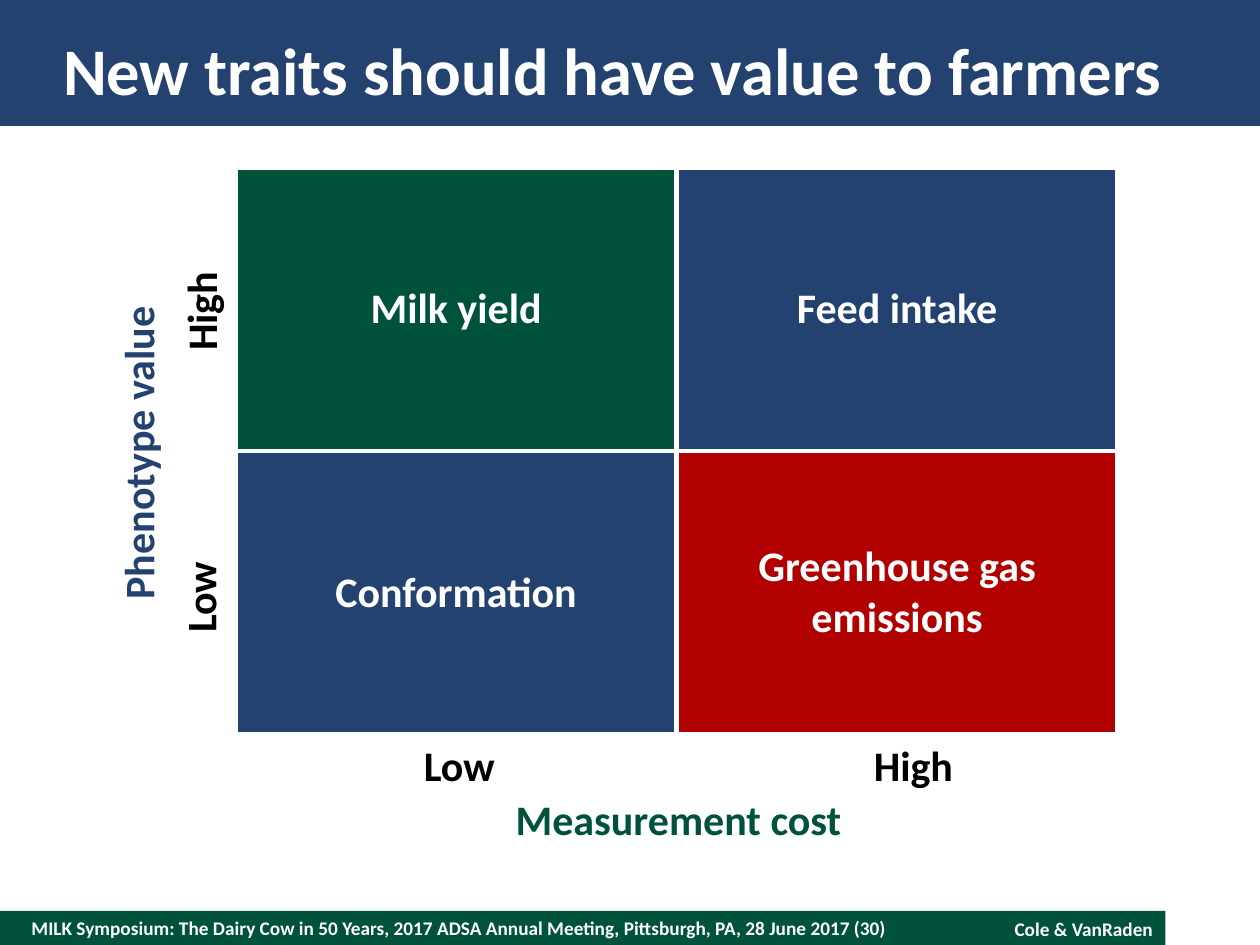
import pptx
import pptx.dml.color
import pptx.enum.shapes
import pptx.enum.text
import pptx.oxml.ns
import pptx.util
from lxml import etree

Inches = pptx.util.Inches
Pt = pptx.util.Pt
Align = pptx.enum.text.PP_ALIGN
Anchor = pptx.enum.text.MSO_ANCHOR

COLORS = {
    "green": "00523C",
    "blue": "244270",
    "red": "B00000",
    "white": "FFFFFF",
    "black": "000000",
}
CELLS = [
    [("Milk yield", "green"), ("Feed intake", "blue")],
    [("Conformation", "blue"), ("Greenhouse gas emissions", "red")],
]


def color(name):
    return pptx.dml.color.RGBColor.from_string(COLORS[name])


def write_text(frame, text, size=24, fill="white", align=Align.CENTER,
               line_spacing=None):
    paragraph = frame.paragraphs[0]
    paragraph.alignment = align
    if line_spacing:
        paragraph.line_spacing = Pt(line_spacing)
    run = paragraph.add_run()
    run.text = text
    run.font.name = "Calibri"
    run.font.size = Pt(size)
    run.font.bold = True
    run.font.color.rgb = color(fill)


def clear_margins(target):
    """Set the four text margins of a text frame or table cell to zero."""
    for side in ("left", "top", "right", "bottom"):
        setattr(target, f"margin_{side}", 0)


def add_bar(slide, left, top, width, height, fill):
    shape = slide.shapes.add_shape(
        pptx.enum.shapes.MSO_SHAPE.RECTANGLE,
        Inches(left), Inches(top), Inches(width), Inches(height))
    shape.shadow.inherit = False
    shape.fill.solid()
    shape.fill.fore_color.rgb = color(fill)
    shape.line.fill.background()


def add_label(slide, text, left, top, width, height, rotation=0, wrap=True,
              **text_format):
    shape = slide.shapes.add_textbox(
        Inches(left), Inches(top), Inches(width), Inches(height))
    shape.rotation = rotation
    shape.text_frame.word_wrap = wrap
    write_text(shape.text_frame, text, **text_format)
    return shape


def add_title(slide, text):
    title = slide.shapes.title
    title.left, title.top = Inches(0.5), Inches(0.2)
    title.width, title.height = Inches(9), Inches(0.7)
    frame = title.text_frame
    frame.auto_size = pptx.enum.text.MSO_AUTO_SIZE.NONE
    frame.vertical_anchor = Anchor.MIDDLE
    clear_margins(frame)
    write_text(frame, text, size=38, align=Align.LEFT)
    # The placeholder comes first in the layout, so lift it above the bar.
    slide.shapes._spTree.append(title._element)


def add_footer(slide):
    source = add_label(
        slide,
        "MILK Symposium: The Dairy Cow in 50 Years, 2017 ADSA Annual Meeting, "
        "Pittsburgh, PA, 28 June 2017 (30)",
        0.25, 7.23, 7, 0.27, size=11, align=Align.LEFT)
    source.text_frame.vertical_anchor = Anchor.MIDDLE
    clear_margins(source.text_frame)
    add_label(slide, "Cole & VanRaden", 7.25, 7.23, 2, 0.29,
              size=11, align=Align.RIGHT)


def set_borders(cell, fill, width):
    properties = cell._tc.get_or_add_tcPr()
    qn = pptx.oxml.ns.qn
    for index, side in enumerate(("lnL", "lnR", "lnT", "lnB")):
        line = etree.Element(qn(f"a:{side}"), w=str(Pt(width)))
        solid = etree.SubElement(line, qn("a:solidFill"))
        etree.SubElement(solid, qn("a:srgbClr"), val=COLORS[fill])
        properties.insert(index, line)


def add_matrix(slide):
    table = slide.shapes.add_table(
        2, 2, Inches(1.87), Inches(1.33), Inches(7), Inches(4.5)).table
    for row, values in enumerate(CELLS):
        for column, (text, fill) in enumerate(values):
            cell = table.cell(row, column)
            cell.fill.solid()
            cell.fill.fore_color.rgb = color(fill)
            cell.vertical_anchor = Anchor.MIDDLE
            clear_margins(cell)
            set_borders(cell, "white", 3)
            write_text(cell.text_frame, text)


def add_axes(slide):
    levels = [
        ("Low", 3.26, 5.82, 0.77, 0),
        ("High", 6.83, 5.82, 0.84, 0),
        ("Low", 1.2, 4.49, 0.77, 270),
        ("High", 1.17, 2.22, 0.84, 270),
    ]
    for text, left, top, width, rotation in levels:
        add_label(slide, text, left, top, width, 0.5, rotation=rotation,
                  wrap=False, fill="black")
    add_label(slide, "Phenotype value", -1.34, 3.37, 4.92, 0.45,
              rotation=270, fill="blue", line_spacing=25)
    add_label(slide, "Measurement cost", 2.08, 6.25, 6.61, 0.5, fill="green")


def main():
    presentation = pptx.Presentation()
    presentation.slide_width = Inches(10)
    presentation.slide_height = Inches(7.5)
    slide = presentation.slides.add_slide(presentation.slide_layouts[5])
    add_bar(slide, 0, 7.23, 9.25, 0.27, "green")
    add_bar(slide, 0, 0, 10, 1, "blue")
    add_footer(slide)
    add_title(slide, "New traits should have value to farmers")
    add_matrix(slide)
    add_axes(slide)
    presentation.save("out.pptx")


if __name__ == "__main__":
    main()
